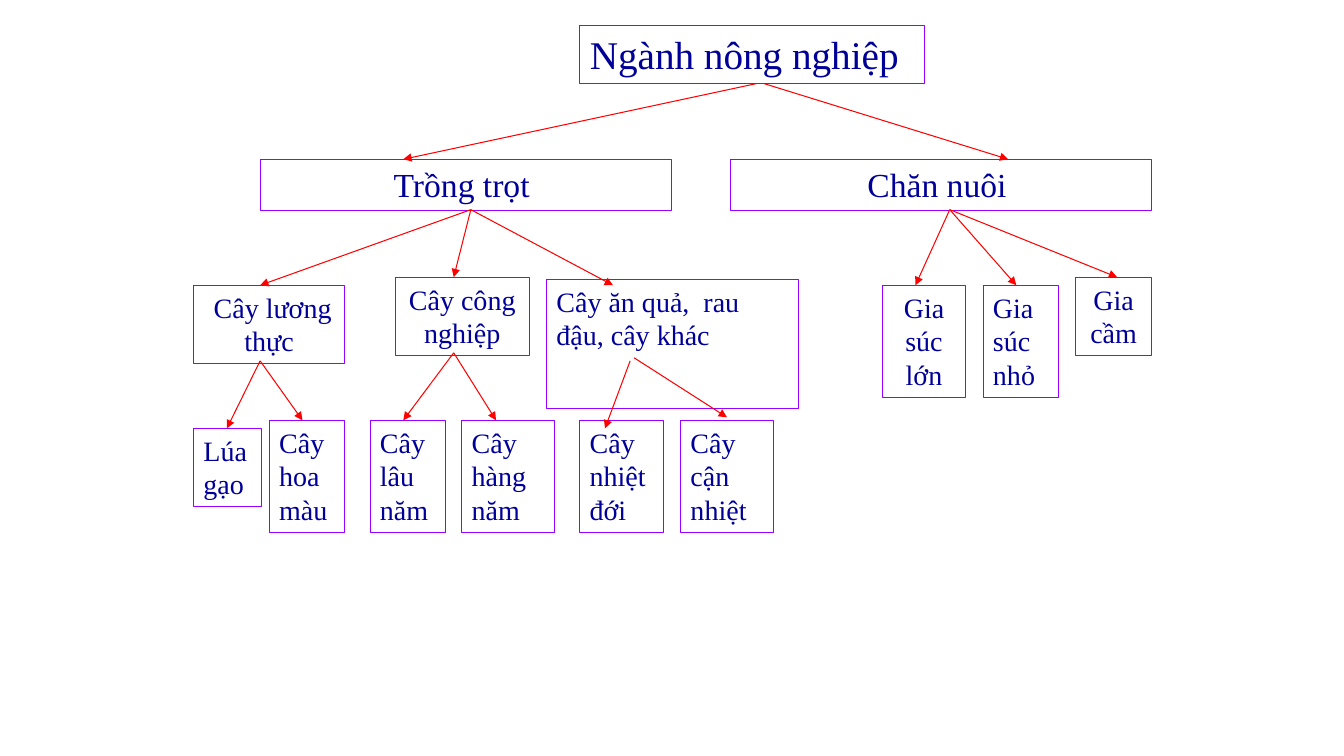
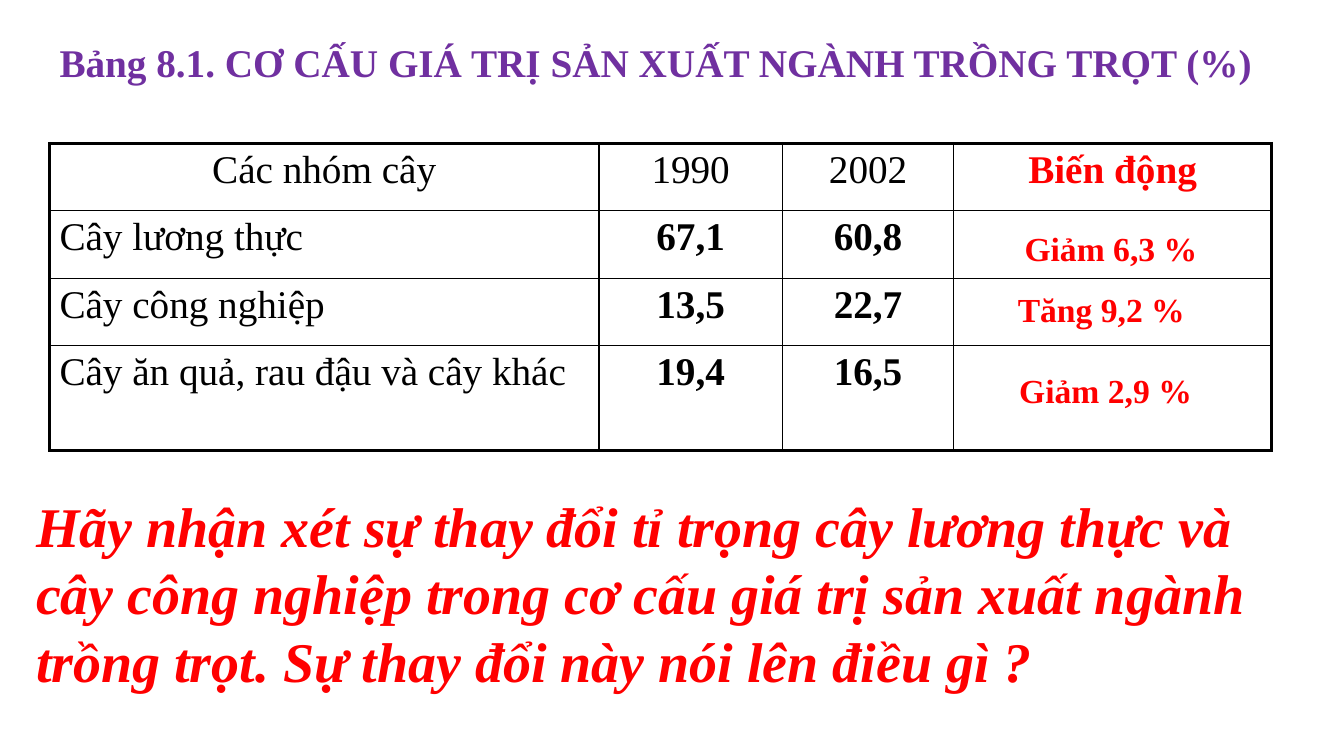
from lxml import etree
from pptx import Presentation
from pptx.dml.color import RGBColor
from pptx.enum.shapes import MSO_CONNECTOR, MSO_SHAPE
from pptx.enum.text import MSO_ANCHOR, MSO_AUTO_SIZE, PP_ALIGN
from pptx.oxml.ns import qn
from pptx.util import Inches, Pt

LEFT, CENTER = PP_ALIGN.LEFT, PP_ALIGN.CENTER
TOP, MIDDLE = MSO_ANCHOR.TOP, MSO_ANCHOR.MIDDLE
NO_AUTOFIT = MSO_AUTO_SIZE.NONE
RECTANGLE, STRAIGHT = MSO_SHAPE.RECTANGLE, MSO_CONNECTOR.STRAIGHT

FONT = "Times New Roman"
NAVY, VIOLET, PURPLE = "000099", "9900FF", "7030A0"
RED, BLACK, WHITE = "FF0000", "000000", "FFFFFF"
TWO_LINES, THREE_LINES = 0.78, 1.11

BRANCHES = [
    ("Trồng trọt ", 2.58, 4.08),
    ("Chăn nuôi ", 7.25, 4.17),
]
GROUPS = [
    (" Cây lương thực", 1.92, 2.83, 1.5, TWO_LINES, CENTER),
    ("Cây công nghiệp", 3.92, 2.75, 1.33, TWO_LINES, CENTER),
    ("Cây ăn quả,  rau đậu, cây khác", 5.42, 2.77, 2.5, 1.28, LEFT),
    ("Gia súc lớn", 8.75, 2.83, 0.83, THREE_LINES, CENTER),
    ("Gia súc nhỏ", 9.75, 2.83, 0.75, THREE_LINES, LEFT),
    ("Gia cầm", 10.67, 2.75, 0.75, TWO_LINES, CENTER),
    ("Lúa gạo", 1.92, 4.25, 0.67, TWO_LINES, LEFT),
]
CROPS = [
    ("Cây hoa màu", 2.67, 0.75),
    ("Cây lâu năm", 3.67, 0.75),
    ("Cây hàng năm", 4.58, 0.92),
    ("Cây nhiệt đới", 5.75, 0.83),
    ("Cây cận nhiệt", 6.75, 0.92),
]
ARROWS = [
    ((7.5, 0.83), [(4, 1.58)]),
    ((7.58, 0.83), [(10, 1.58)]),
    ((4.67, 2.08), [(2.58, 2.83), (4.5, 2.75), (6.08, 2.83)]),
    ((9.42, 2.08), [(9.08, 2.83), (10.08, 2.83), (11.08, 2.75)]),
    ((2.58, 3.58), [(2.25, 4.25), (3, 4.17)]),
    ((4.5, 3.5), [(4, 4.17), (4.92, 4.17)]),
    ((6.25, 3.58), [(6, 4.25)]),
    ((6.29, 3.55), [(7.21, 4.14)]),
]
COLUMN_WIDTHS = [5.45, 1.82, 1.7, 3.15]
ROW_HEIGHTS = [0.67, 0.67, 0.67, 1.04]
TABLE_ROWS = [
    ["Các nhóm cây", "1990", "2002", "Biến động"],
    ["Cây lương thực", "67,1", "60,8", ""],
    ["Cây công nghiệp", "13,5", "22,7", ""],
    ["Cây ăn quả, rau đậu và cây khác", "19,4", "16,5", ""],
]
CHANGES = [
    ("Giảm 6,3 % ", 2.26, 2.2, 0.4),
    ("Tăng 9,2 % ", 2.87, 2.01, 0.4),
    ("Giảm 2,9 %", 3.5, 2.01, 0.73),
]
QUESTION = (
    "Hãy nhận xét sự thay đổi tỉ trọng cây lương thực và cây công nghiệp "
    "trong cơ cấu giá trị sản xuất ngành trồng trọt. "
    "Sự thay đổi này nói lên điều gì ?"
)


def color(value):
    """Turn a hex string into a colour."""
    return RGBColor.from_string(value)


def assign(target, values):
    """Set each attribute named in a dict of format values."""
    for name, value in values.items():
        setattr(target, name, value)


class Deck:
    """Hold the presentation, its style and the current slide."""

    def __init__(self):
        """Start a widescreen presentation."""
        self.presentation = Presentation()
        size = {"slide_width": Inches(13.33), "slide_height": Inches(7.5)}
        assign(self.presentation, size)
        self.slide = None

    def add_slide(self):
        """Add a slide that has only a title."""
        layout = self.presentation.slide_layouts[5]
        self.slide = self.presentation.slides.add_slide(layout)

    def set_text(self, frame, text, size, hex_color, align=LEFT, **style):
        """Put one formatted paragraph into a text frame."""
        paragraph = frame.paragraphs[0]
        paragraph.text = text
        paragraph.alignment = align
        assign(paragraph.font, {"name": FONT, "size": Pt(size), **style})
        paragraph.font.color.rgb = color(hex_color)

    def fill_frame(self, shape, text, size, hex_color, align=LEFT, anchor=TOP, **style):
        """Set the frame of a shape and its text."""
        frame = shape.text_frame
        assign(frame, {"word_wrap": True, "auto_size": NO_AUTOFIT, "vertical_anchor": anchor})
        self.set_text(frame, text, size, hex_color, align, **style)

    def outline(self, shape):
        """Give a shape the thin violet outline."""
        shape.line.color.rgb = color(VIOLET)
        shape.line.width = Pt(0.75)

    def title(self, text, bounds, hex_color, **style):
        """Place and format the title placeholder."""
        shape = self.slide.shapes.title
        names = ("left", "top", "width", "height")
        assign(shape, dict(zip(names, map(Inches, bounds))))
        self.fill_frame(shape, text, 28, hex_color, **style)
        return shape

    def text(self, text, bounds, size, hex_color, **style):
        """Add a text box."""
        shape = self.slide.shapes.add_textbox(*map(Inches, bounds))
        self.fill_frame(shape, text, size, hex_color, **style)

    def rectangle(self, text, bounds, size, hex_color, **style):
        """Add an unfilled rectangle with text."""
        shape = self.slide.shapes.add_shape(RECTANGLE, *map(Inches, bounds))
        shape.shadow.inherit = False
        shape.fill.background()
        self.fill_frame(shape, text, size, hex_color, **style)
        return shape

    def box(self, text, bounds, size=20, align=LEFT):
        """Add an outlined box of the tree."""
        self.outline(self.rectangle(text, bounds, size, NAVY, align=align))

    def label(self, text, bounds):
        """Add a white label with bold red text."""
        shape = self.rectangle(text, bounds, 24, RED, align=CENTER, anchor=MIDDLE, bold=True)
        shape.fill.solid()
        shape.fill.fore_color.rgb = color(WHITE)
        shape.line.fill.background()

    def arrow(self, start, end):
        """Add a thin red arrow."""
        points = map(Inches, (*start, *end))
        connector = self.slide.shapes.add_connector(STRAIGHT, *points)
        connector.line.color.rgb = color(RED)
        connector.line.width = Pt(0.75)
        properties = connector._element.spPr
        line = properties.find(qn("a:ln"))
        etree.SubElement(line, qn("a:tailEnd"), type="triangle")
        etree.SubElement(properties, qn("a:effectLst"))

    def border(self, cell, edges):
        """Draw black borders, thick on the outer edges."""
        properties = cell._tc.get_or_add_tcPr()
        for side, is_outer in edges.items():
            width = Pt(2.25 if is_outer else 1)
            line = etree.SubElement(properties, qn(f"a:ln{side}"), w=str(width))
            fill = etree.SubElement(line, qn("a:solidFill"))
            etree.SubElement(fill, qn("a:srgbClr"), val=BLACK)

    def table(self, rows, left, top, widths, heights):
        """Add a bordered table without fills."""
        bounds = map(Inches, (left, top, sum(widths), sum(heights)))
        table = self.slide.shapes.add_table(len(rows), len(widths), *bounds).table
        assign(table, {"first_row": False, "horz_banding": False})
        for column, width in zip(table.columns, widths):
            column.width = Inches(width)
        last_row, last_column = len(rows) - 1, len(widths) - 1
        for i, (row, height) in enumerate(zip(rows, heights)):
            table.rows[i].height = Inches(height)
            for j, text in enumerate(row):
                cell = table.cell(i, j)
                edges = {"L": j == 0, "R": j == last_column, "T": i == 0, "B": i == last_row}
                self.border(cell, edges)
                cell.fill.background()
                is_change = j == last_column
                align = LEFT if i and j == 0 else CENTER
                bold = is_change or (i > 0 and j > 0)
                hex_color = RED if is_change else BLACK
                self.set_text(cell.text_frame, text, 28, hex_color, align, bold=bold)


def build_tree(deck):
    """Build the tree of farming branches."""
    deck.add_slide()
    deck.outline(deck.title("Ngành nông nghiệp", (5.75, 0.25, 3.42, 0.58), NAVY))
    for text, left, width in BRANCHES:
        deck.box(text, (left, 1.58, width, 0.51), 24, CENTER)
    for text, *bounds, align in GROUPS:
        deck.box(text, bounds, align=align)
    for text, left, width in CROPS:
        deck.box(text, (left, 4.17, width, THREE_LINES))
    for start, ends in ARROWS:
        for end in ends:
            deck.arrow(start, end)


def build_crop_table(deck):
    """Build the table of crop shares and its question."""
    deck.add_slide()
    heading = "Bảng 8.1. CƠ CẤU GIÁ TRỊ SẢN XUẤT NGÀNH TRỒNG TRỌT (%)"
    deck.title(heading, (0.49, 0.33, 12.38, 0.57), PURPLE, bold=True)
    deck.table(TABLE_ROWS, 0.49, 1.42, COLUMN_WIDTHS, ROW_HEIGHTS)
    deck.text(QUESTION, (0.26, 4.83, 12.86, 2.12), 40, RED, bold=True, italic=True)
    for text, top, width, height in CHANGES:
        deck.label(text, (9.96, top, width, height))


def main():
    """Build and save the presentation."""
    deck = Deck()
    build_tree(deck)
    build_crop_table(deck)
    deck.presentation.save("out.pptx")


if __name__ == "__main__":
    main()
